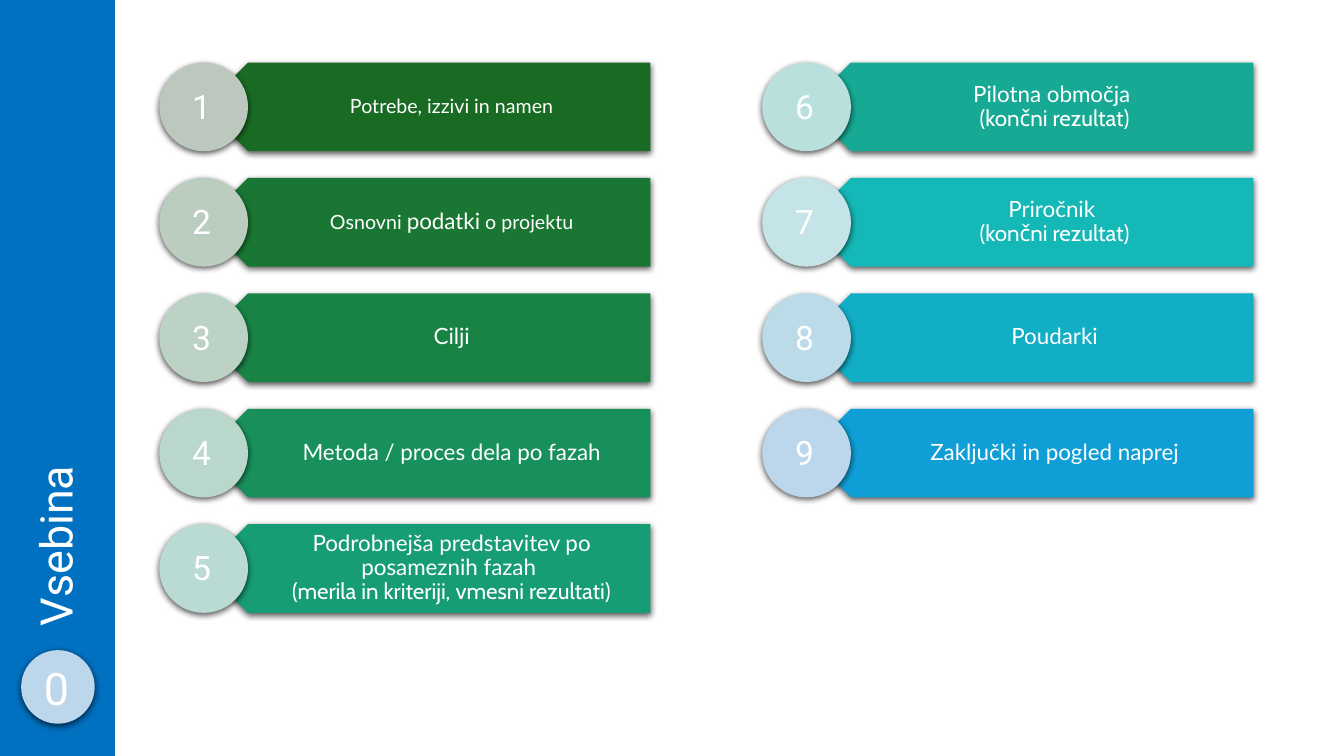
from lxml import etree
from pptx import Presentation
from pptx import util as u
from pptx.dml.color import RGBColor
from pptx.enum import shapes, text
from pptx.oxml import ns

Inches = u.Inches


def paint(preset, left, top, width, height, color, shadowed=True):
    shape = slide.shapes.add_shape(preset, Inches(left), Inches(top), Inches(width), Inches(height))
    shape.fill.solid()
    shape.fill.fore_color.rgb = RGBColor.from_string(color)
    shape.line.fill.background()
    shape.shadow.inherit = False
    if shadowed:
        effects = shape.element.spPr.find(ns.qn("a:effectLst"))
        outer = etree.SubElement(effects, ns.qn("a:outerShdw"), blurRad=str(u.Pt(4.5)),
                                 dist=str(u.Pt(1.5)), dir="5400000", algn="ctr", rotWithShape="0")
        black = etree.SubElement(outer, ns.qn("a:srgbClr"), val="000000")
        etree.SubElement(black, ns.qn("a:alpha"), val="63000")
    return shape


def write(lines, box, holder=None, font="Roboto", size=24, color="FFFFFF", spacing=None,
          align=text.PP_ALIGN.CENTER, insets=(0.1, 0.05, 0.1, 0.05), fit=text.MSO_AUTO_SIZE.NONE):
    left, top, width, height = map(Inches, box)
    holder = holder or slide.shapes.add_textbox(left, top, width, height)
    holder.left, holder.top, holder.width, holder.height = left, top, width, height
    frame = holder.text_frame
    frame.word_wrap = True
    frame.auto_size = fit
    frame.vertical_anchor = text.MSO_ANCHOR.MIDDLE
    frame.margin_left, frame.margin_top, frame.margin_right, frame.margin_bottom = map(Inches, insets)
    paragraph = frame.paragraphs[0]
    paragraph.alignment = align
    paragraph.line_spacing = spacing
    for index, line in enumerate(lines):
        if index:
            paragraph.add_line_break()
        for words, words_size, words_font in line:
            run = paragraph.add_run()
            run.text = words
            run.font.size = u.Pt(words_size or size)
            run.font.name = words_font or font
            run.font.color.rgb = RGBColor.from_string(color)


prs = Presentation()
prs.slide_width, prs.slide_height = Inches(13.33), Inches(7.5)
slide = prs.slides.add_slide(prs.slide_layouts[5])

paint(shapes.MSO_SHAPE.RECTANGLE, 0, 0, 1.14, 7.5, "0070C0", shadowed=False)

result = [("(končni rezultat)", 16, "Cabin")]
topics = [
    ("196B24", "BCC7BD", [[("Potrebe, izzivi in namen", 14, None)]]),
    ("197733", "BBCDBF", [[("Osnovni ", 14, None), ("podatki", 16, None), (" o projektu", 14, None)]]),
    ("198345", "BBD2C4", [[("Cilji", 16, None)]]),
    ("18905C", "BAD7CB", [[("Metoda / proces dela po fazah", 16, None)]]),
    ("179D76", "BADBD3", [[("Podrobnejša predstavitev po posameznih fazah ", 16, None)],
                          [("(merila in kriteriji, vmesni rezultati)", 16, "Cabin")]]),
    ("16AA94", "BAE0DD", [[("Pilotna območja ", 16, None)], result]),
    ("14B8B7", "C5E4E8", [[("Priročnik ", 16, None)], result]),
    ("12AEC6", "BBDBE8", [[("Poudarki", 16, None)]]),
    ("0F9ED5", "BCD6EB", [[("Zaključki in pogled naprej", 16, None)]]),
]
for index, (plate_color, circle_color, topic) in enumerate(topics):
    column, row = divmod(index, 5)
    left = 1.58 + column * 5.98
    top = 0.62 + row * 1.145
    plate = paint(shapes.MSO_SHAPE.PENTAGON, left + 0.44, top, 4.43, 0.88, plate_color)
    plate.rotation = 180
    write(topic, (left + 0.66, top, 4.21, 0.88), font="Lato", spacing=0.9,
          insets=(0.39, 0.07, 0.12, 0.07))
    paint(shapes.MSO_SHAPE.OVAL, left, top, 0.88, 0.88, circle_color)
    write([[(str(index + 1), 24, None)]], (left + 0.05, top + 0.18, 0.74, 0.5),
          fit=text.MSO_AUTO_SIZE.SHAPE_TO_FIT_TEXT)

title = slide.shapes.title
slide.shapes.element.append(title.element)
write([[("Vsebina", 32, None)]], (-2.49, 2.68, 6.13, 1.14), holder=title, spacing=0.9,
      align=text.PP_ALIGN.LEFT)
title.rotation = 270

paint(shapes.MSO_SHAPE.OVAL, 0.21, 6.45, 0.73, 0.73, "BCD6EB")
write([[("0", 32, None)]], (0.19, 6.5, 0.74, 0.64), fit=text.MSO_AUTO_SIZE.SHAPE_TO_FIT_TEXT)

prs.save("out.pptx")
